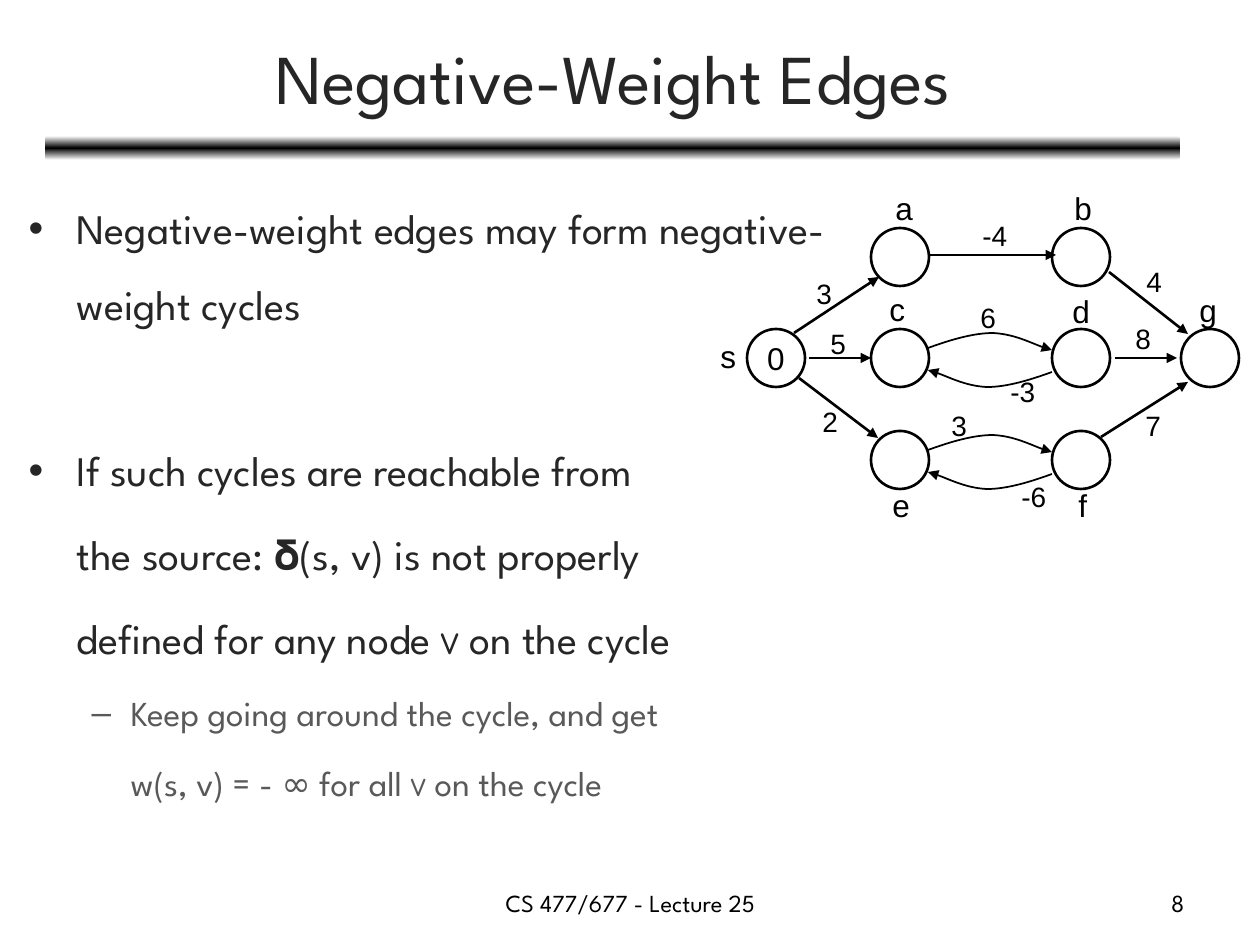
import copy

import pptx
import pptx.util
import pptx.dml.color
import pptx.enum.shapes
import pptx.enum.text
import pptx.oxml
import pptx.oxml.ns

PX = 914400 / 126
BLACK = pptx.dml.color.RGBColor(0, 0, 0)
WHITE = pptx.dml.color.RGBColor(255, 255, 255)
DARK = pptx.dml.color.RGBColor(0x26, 0x26, 0x26)
GREY = pptx.dml.color.RGBColor(0x59, 0x59, 0x59)
SPARTAN, COMIC, ARIAL = "League Spartan", "Comic Neue", "Arial"
ALIGN = pptx.enum.text.PP_ALIGN
SHAPE = pptx.enum.shapes.MSO_SHAPE
qn = pptx.oxml.ns.qn

TITLE = "Negative-Weight Edges"
BODY = [
    dict(runs=["Negative-weight edges may form negative-weight cycles"], bullet=True),
    dict(runs=["If such cycles are reachable from"], bullet=True, before=52),
    dict(runs=["the source: 𝛅(s, v) is not properly"]),
    dict(runs=["defined for any node ", "v", " on the cycle"]),
    dict(runs=["Keep going around the cycle, and get"], bullet=True, level=1),
    dict(runs=["w(s, v) = - ∞ for all ", "v", " on the cycle"], level=1),
]
LEVELS = [dict(size=24, color=DARK, margin=48, hang=48),
          dict(size=20, color=GREY, margin=102, hang=39)]

DIAMETER = 58
COLUMNS = [747, 871, 1052, 1181]
ROWS = [228, 329, 431]
NODES = [("s", 0, 1, 708, 331), ("a", 1, 0, 883, 183), ("b", 2, 0, 1062, 183),
         ("c", 1, 1, 877, 284), ("d", 2, 1, 1060, 286), ("e", 1, 2, 880, 480),
         ("f", 2, 2, 1066, 480), ("g", 3, 1, 1187, 285)]
WEIGHTS = [("3", 804, 270), ("-4", 970, 212), ("2", 810, 398), ("8", 1123, 315),
           ("-6", 1009, 473), ("-3", 998, 368), ("3", 939, 402), ("5", 818, 320),
           ("6", 968, 294), ("4", 1134, 258), ("7", 1133, 402)]
EDGES = [(929, 255, 1056, 255), (794, 333, 879, 277), (799, 378, 878, 438),
         (1109, 272, 1188, 334), (1101, 437, 1188, 382),
         (809, 358, 871, 358), (1115, 358, 1177, 358)]
ARC = [(928, 348), (950, 340), (973, 333), (993, 333),
       (1014, 334), (1042, 348), (1052, 350)]
ARC_CENTER = (990, 360)
ARC_SHIFTS = [0, 102]


def box(*lengths):
    return [round(v * PX) for v in lengths]


def add_run(p, text, size=18, font=ARIAL, color=BLACK, align=None):
    r = p.add_run()
    r.text = text
    r.font.size = pptx.util.Pt(size)
    r.font.name = font
    r.font.color.rgb = color
    if align is not None:
        p.alignment = align


def add_text(slide, text, x, y, w, h, wrap=False, **style):
    tf = slide.shapes.add_textbox(*box(x, y, w, h)).text_frame
    tf.word_wrap = wrap
    add_run(tf.paragraphs[0], text, **style)


def place(sp, *lengths):
    sp.left, sp.top, sp.width, sp.height = box(*lengths)
    sp.text_frame.auto_size = pptx.enum.text.MSO_AUTO_SIZE.NONE


def add_arrowhead(sp, width):
    sp.line.color.rgb = BLACK
    sp.line.width = pptx.util.Pt(width)
    ln = sp.line._get_or_add_ln()
    ln.append(pptx.oxml.parse_xml(
        f'<a:tailEnd {pptx.oxml.ns.nsdecls("a")} type="triangle"/>'))


def add_bar(slide):
    sp = slide.shapes.add_shape(SHAPE.ROUNDED_RECTANGLE, *box(45, 136, 1135, 24))
    sp.shadow.inherit = False
    sp.line.fill.background()
    sp.fill.gradient()
    stops = sp.element.find(".//" + qn("a:gsLst"))
    stops.append(copy.deepcopy(stops[0]))
    for stop, position, color in zip(sp.fill.gradient_stops, (0, 0.5, 1),
                                     (WHITE, BLACK, WHITE)):
        stop.position = position
        stop.color.rgb = color
    sp.fill.gradient_angle = 90


def fill_body(tf):
    for i, item in enumerate(BODY):
        p = tf.paragraphs[0] if i == 0 else tf.add_paragraph()
        p.level = item.get("level", 0)
        level = LEVELS[p.level]
        p.line_spacing = 1.5
        if "before" in item:
            p.space_before = pptx.util.Pt(item["before"])
        bullet = item.get("bullet", False)
        margin, hang = box(level["margin"], level["hang"] if bullet else 0)
        pPr = p._p.get_or_add_pPr()
        pPr.set("marL", str(margin))
        pPr.set("indent", str(-hang))
        if not bullet:
            pPr.append(pptx.oxml.parse_xml(
                f'<a:buNone {pptx.oxml.ns.nsdecls("a")}/>'))
        for text in item["runs"]:
            add_run(p, text, size=level["size"], color=level["color"],
                    font=COMIC if text == "v" else SPARTAN)


def add_node(slide, name, col, row, x, y):
    sp = slide.shapes.add_shape(
        SHAPE.OVAL, *box(COLUMNS[col], ROWS[row], DIAMETER, DIAMETER))
    sp.shadow.inherit = False
    sp.fill.background()
    sp.line.color.rgb = BLACK
    sp.line.width = pptx.util.Pt(1.5)
    if name == "s":
        sp.text_frame.word_wrap = False
        add_run(sp.text_frame.paragraphs[0], "0", align=ALIGN.CENTER)
    add_text(slide, name, x, y, 34 if name == "f" else 42, 50)


def add_edge(slide, *ends):
    line = slide.shapes.add_connector(
        pptx.enum.shapes.MSO_CONNECTOR.STRAIGHT, *box(*ends))
    add_arrowhead(line, 1.5)
    line.element.spPr.append(pptx.oxml.parse_xml(
        f'<a:effectLst {pptx.oxml.ns.nsdecls("a")}/>'))


def add_arc(slide, points):
    builder = slide.shapes.build_freeform(*points[0], scale=PX)
    builder.add_line_segments(points[1:], close=False)
    sp = builder.convert_to_shape()
    outline = sp.element.find(".//" + qn("a:path"))
    segments = outline.findall(qn("a:lnTo"))
    for i in range(0, len(segments), 3):
        curve = pptx.oxml.parse_xml(
            f'<a:cubicBezTo {pptx.oxml.ns.nsdecls("a")}/>')
        for segment in segments[i:i + 3]:
            curve.append(segment[0])
            outline.remove(segment)
        outline.append(curve)
    sp.shadow.inherit = False
    sp.fill.background()
    add_arrowhead(sp, 1)


def main():
    prs = pptx.Presentation()
    prs.slide_width, prs.slide_height = box(1260, 945)
    slide = prs.slides.add_slide(prs.slide_layouts[1])
    title, body = slide.placeholders
    add_bar(slide)
    place(title, 46, 14, 1134, 125)
    add_run(title.text_frame.paragraphs[0], TITLE, size=40, font=SPARTAN,
            color=DARK, align=ALIGN.CENTER)
    place(body, 16, 171, 862, 699)
    fill_body(body.text_frame)
    for node in NODES:
        add_node(slide, *node)
    for edge in EDGES:
        add_edge(slide, *edge)
    cx, cy = ARC_CENTER
    back = [(2 * cx - x, 2 * cy - y) for x, y in ARC]
    for shift in ARC_SHIFTS:
        for arc in (ARC, back):
            add_arc(slide, [(x, y + shift) for x, y in arc])
    for text, x, y in WEIGHTS:
        add_text(slide, text, x, y, 50 if len(text) > 1 else 40, 46, size=16)
    footer = dict(wrap=True, size=14, font=SPARTAN)
    add_text(slide, "CS 477/677 - Lecture 25", 431, 882, 399, 44,
             align=ALIGN.CENTER, **footer)
    add_text(slide, "8", 903, 882, 294, 44, align=ALIGN.RIGHT, **footer)
    prs.save("out.pptx")


if __name__ == "__main__":
    main()
